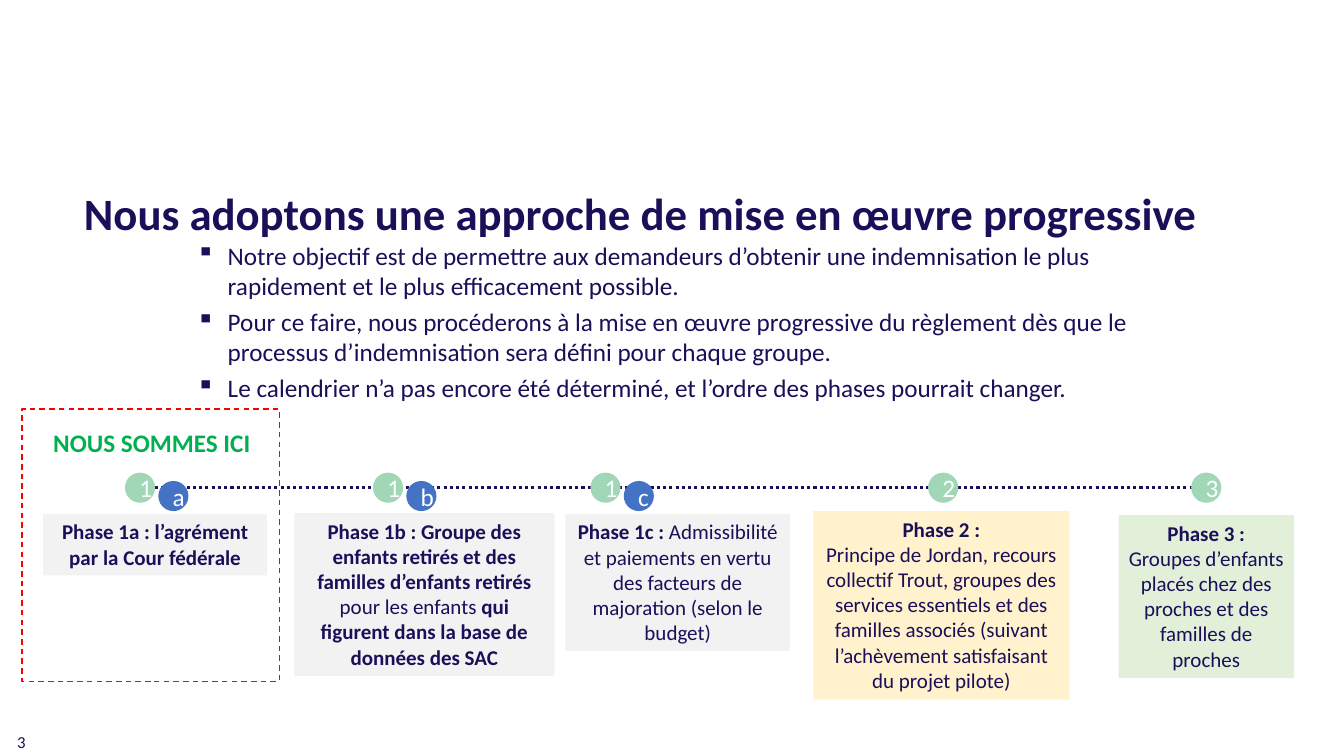
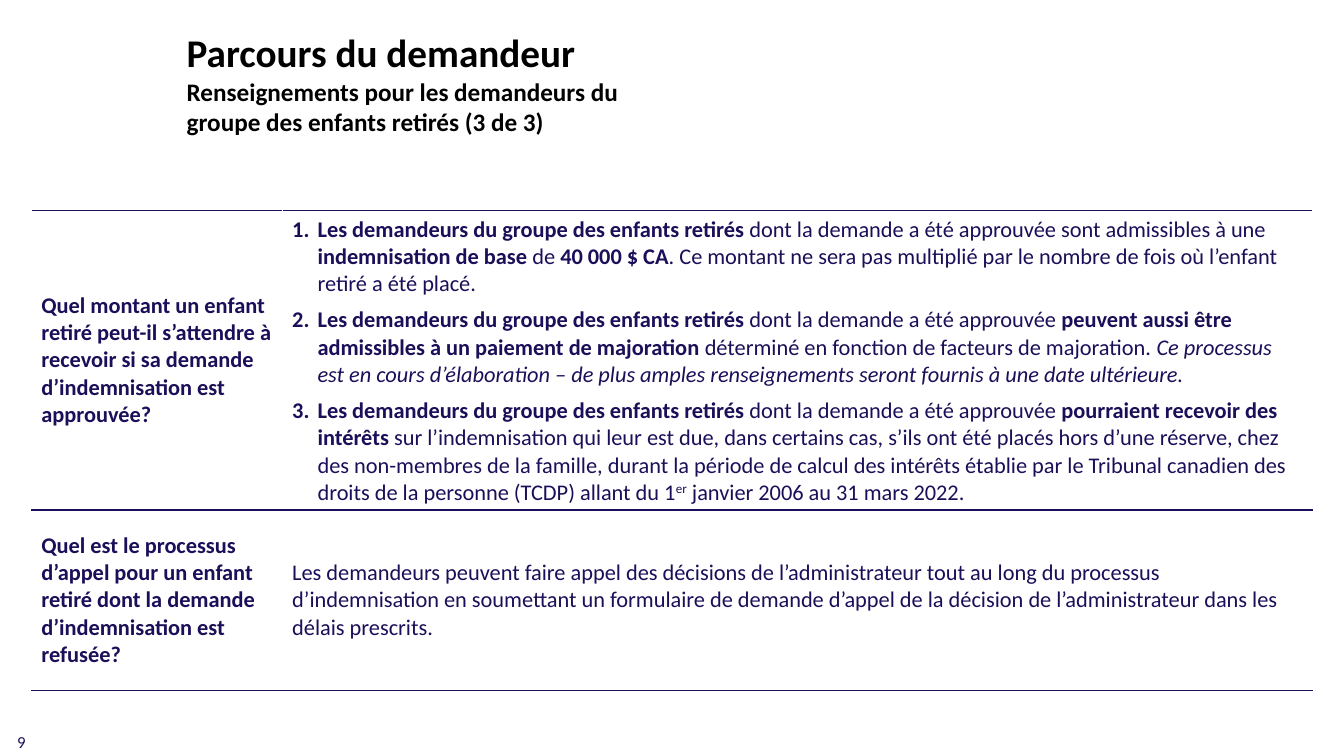
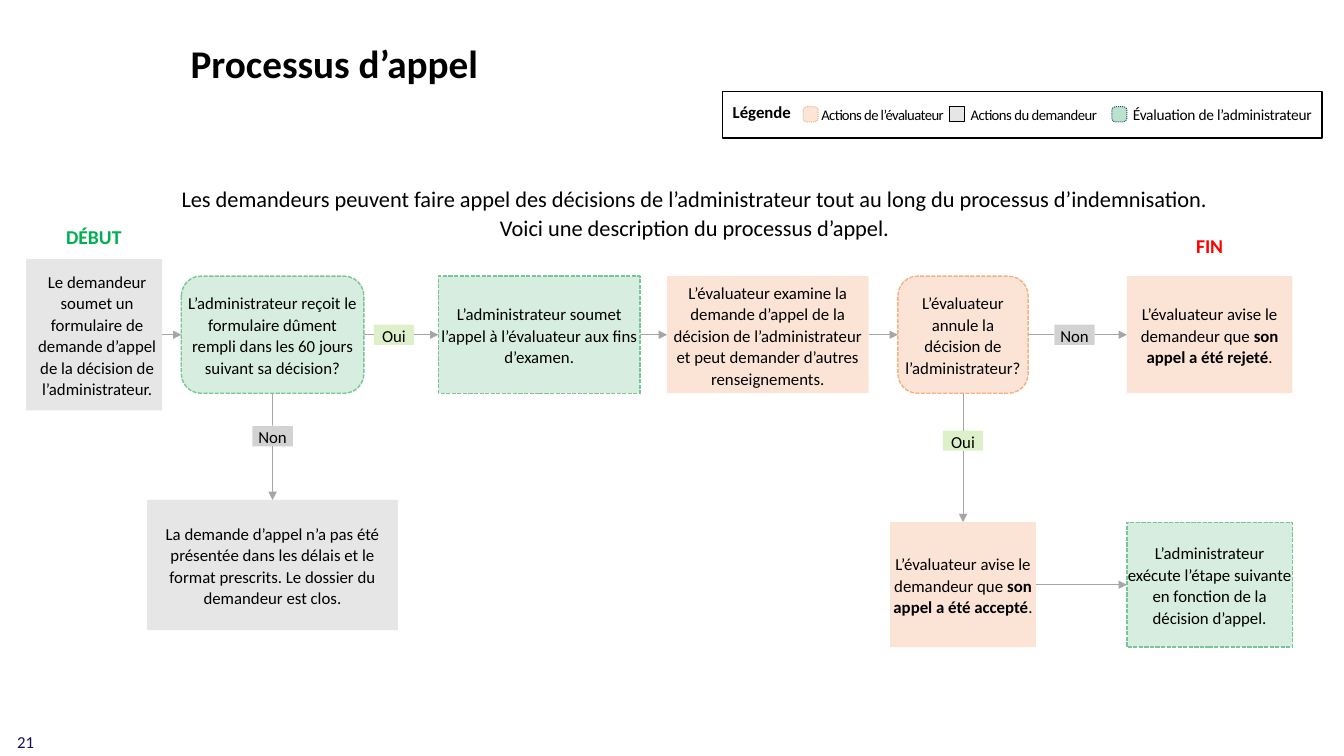
from dataclasses import dataclass
from typing import Iterator, Optional

from lxml.etree import SubElement
from pptx import Presentation
from pptx.dml.color import RGBColor
from pptx.enum.dml import MSO_LINE
from pptx.enum.shapes import MSO_CONNECTOR, MSO_SHAPE
from pptx.enum.text import MSO_ANCHOR, MSO_AUTO_SIZE, PP_ALIGN
from pptx.oxml import parse_xml
from pptx.oxml.ns import nsdecls, qn
from pptx.util import Cm, Pt


@dataclass(frozen=True)
class Theme:
    face: str = "Calibri"
    navy: str = "1B0F59"
    black: str = "000000"
    white: str = "FFFFFF"
    red: str = "FF0000"
    go: str = "00B050"
    mint: str = "A1D7B7"
    blue: str = "4472C4"
    pale: str = "F2F2F2"
    sand: str = "FFF2CC"
    leaf: str = "E2F0D9"
    gray: str = "E7E6E6"
    wire: str = "A6A6A6"
    green: str = "78C697"
    lime: str = "BCE395"
    peach: str = "F8CBAD"
    blush: str = "FBE5D6"
    rust: str = "F4B183"
    steel: str = "1F4E79"
    head: float = 32
    title: float = 28
    body: float = 18
    cell: float = 16
    card: float = 15
    flag: float = 14
    small: float = 12
    key: float = 10.5


T = Theme()


@dataclass(frozen=True)
class Area:
    x: float
    y: float
    w: float
    h: float

    def cm(self) -> tuple:
        return Cm(self.x), Cm(self.y), Cm(self.w), Cm(self.h)


@dataclass(frozen=True)
class Type:
    size: float
    color: str = T.black
    bold: bool = False
    align: PP_ALIGN = PP_ALIGN.CENTER
    lead: float = 1.0
    after: float = 0
    track: float = 0


@dataclass(frozen=True)
class Look:
    fill: Optional[str] = None
    alpha: int = 100
    line: Optional[str] = None
    width: float = 1
    dash: Optional[MSO_LINE] = None
    form: MSO_SHAPE = MSO_SHAPE.RECTANGLE


@dataclass(frozen=True)
class Phase:
    area: Area
    fill: str
    text: str
    dot: float
    digit: str
    letter: str = ""


@dataclass(frozen=True)
class Step:
    name: str
    area: Area
    look: Look
    text: str
    inset: Optional[tuple] = (0, 0)


@dataclass(frozen=True)
class Key:
    x: float
    gap: float
    w: float
    look: Look
    text: str
    type: Type


LEFT = PP_ALIGN.LEFT
DOT = Type(T.body, T.white)
CARD = Type(T.card, T.navy)
FLOW = Type(T.small, lead=1.07, after=6.4)
ROUND = MSO_SHAPE.ROUNDED_RECTANGLE
ADMIN = Look(T.green, 30, T.green, 1, MSO_LINE.SQUARE_DOT)
CHECK = Look(T.green, 30, T.green, 1, MSO_LINE.SQUARE_DOT, ROUND)
JUDGE = Look(T.peach, 50)
RULE = Look(T.peach, 50, T.rust, 1, MSO_LINE.SQUARE_DOT, ROUND)
CLAIM = Look(T.gray)
YES = Look(T.lime, 50)
NO = Look(T.wire, 50)
BULLET = ("a:buChar", "char", "▪")
NUMBER = ("a:buAutoNum", "type", "arabicPeriod")

PHASES = [
    Phase(Area(1.09, 12.95, 5.64, 1.55), T.pale,
          "*Phase 1a : l’agrément par la Cour fédérale*", 3.15, "1", "a"),
    Phase(Area(7.42, 12.93, 6.55, 4.11), T.pale,
          "*Phase 1b : Groupe des enfants retirés et des familles d’enfants retirés "
          "*pour les enfants *qui figurent dans la base de données des SAC*", 9.4, "1", "b"),
    Phase(Area(14.25, 12.95, 5.66, 3.45), T.pale,
          "*Phase 1c : *Admissibilité et paiements en vertu des facteurs de majoration "
          "(selon le budget)", 14.88, "1", "c"),
    Phase(Area(20.5, 12.88, 6.45, 4.75), T.sand,
          "*Phase 2 :*\nPrincipe de Jordan, recours collectif Trout, groupes des services "
          "essentiels et des familles associés (suivant l’achèvement satisfaisant du projet "
          "pilote)", 23.39, "2"),
    Phase(Area(28.19, 12.98, 4.42, 4.11), T.leaf,
          "*Phase 3 :*\nGroupes d’enfants placés chez des proches et des familles de proches",
          30.02, "3"),
]

GOALS = (
    "Notre objectif est de permettre aux demandeurs d’obtenir une indemnisation le plus "
    "rapidement et le plus efficacement possible.\n"
    "Pour ce faire, nous procéderons à la mise en œuvre progressive du règlement dès que le "
    "processus d’indemnisation sera défini pour chaque groupe.\n"
    "Le calendrier n’a pas encore été déterminé, et l’ordre des phases pourrait changer."
)

GROUP = "*Les demandeurs du groupe des enfants retirés *dont la demande a été approuvée "
ROWS = [
    ("Quel montant un enfant retiré peut-il s’attendre à recevoir si sa demande "
     "d’indemnisation est approuvée?",
     GROUP + "sont admissibles à une *indemnisation de base *de *40 000 $ CA*. Ce montant ne "
     "sera pas multiplié par le nombre de fois où l’enfant retiré a été placé.\n"
     + GROUP + "*peuvent aussi être admissibles à un paiement de majoration *déterminé en "
     "fonction de facteurs de majoration. _Ce processus est en cours d’élaboration – de plus "
     "amples renseignements seront fournis à une date ultérieure._\n"
     + GROUP + "*pourraient recevoir des intérêts* sur l’indemnisation qui leur est due, dans "
     "certains cas, s’ils ont été placés hors d’une réserve, chez des non-membres de la "
     "famille, durant la période de calcul des intérêts établie par le Tribunal canadien des "
     "droits de la personne (TCDP) allant du 1^er^ janvier 2006 au 31 mars 2022."),
    ("Quel est le processus d’appel pour un enfant retiré dont la demande d’indemnisation "
     "est refusée?",
     "Les demandeurs peuvent faire appel des décisions de l’administrateur tout au long du "
     "processus d’indemnisation en soumettant un formulaire de demande d’appel de la décision "
     "de l’administrateur dans les délais prescrits."),
]

TOP, HIGH, LOW, DEEP = 6.96, 2.95, 13.16, 3.15
TAG, TALL = 1.02, 0.51
STEPS = [
    Step("start", Area(0.66, 6.53, 3.43, 3.81), CLAIM,
         "Le demandeur soumet un formulaire de demande d’appel de la décision de "
         "l’administrateur.", (0.15, 0)),
    Step("check", Area(4.57, TOP, 4.6, HIGH), CHECK,
         "L’administrateur reçoit le formulaire dûment rempli dans les 60 jours suivant sa "
         "décision?"),
    Step("in time", Area(9.42, 8.18, TAG, TALL), YES, "Oui"),
    Step("late", Area(6.36, 10.74, TAG, TALL), NO, "Non"),
    Step("closed", Area(3.71, 12.6, 6.32, 3.28), CLAIM,
         "La demande d’appel n’a pas été présentée dans les délais et le format prescrits. "
         "Le dossier du demandeur est clos.", None),
    Step("submit", Area(11.05, TOP, 5.08, HIGH), ADMIN,
         "L’administrateur soumet l’appel à l’évaluateur aux fins d’examen."),
    Step("review", Area(16.81, TOP, 5.08, HIGH), JUDGE,
         "L’évaluateur examine la demande d’appel de la décision de l’administrateur et peut "
         "demander d’autres renseignements."),
    Step("rule", Area(22.63, TOP, 3.28, HIGH), RULE,
         "L’évaluateur annule la décision de l’administrateur?"),
    Step("upheld", Area(26.57, 8.18, TAG, TALL), NO, "Non"),
    Step("annulled", Area(23.76, 10.85, TAG, TALL), YES, "Oui"),
    Step("reject", Area(28.4, TOP, 4.17, HIGH), JUDGE,
         "L’évaluateur avise le demandeur que *son appel a été rejeté*."),
    Step("accept", Area(22.43, LOW, 3.68, DEEP), JUDGE,
         "L’évaluateur avise le demandeur que *son appel a été accepté*."),
    Step("next", Area(28.4, LOW, 4.17, DEEP), ADMIN,
         "L’administrateur exécute l’étape suivante en fonction de la décision d’appel."),
]
ACROSS = [("start", "check"), ("check", "in time"), ("in time", "submit"),
          ("submit", "review"), ("review", "rule"), ("rule", "upheld"),
          ("upheld", "reject"), ("accept", "next")]
DOWN = [("check", "late"), ("late", "closed"), ("rule", "annulled"), ("annulled", "accept")]
TAGS = {"in time", "late", "upheld", "annulled"}

KEYS = [
    Key(20.24, 0.21, 3.86, Look(T.blush, 100, T.rust, 0.75, MSO_LINE.ROUND_DOT, ROUND),
        "Actions de l’évaluateur", Type(T.key, align=LEFT, track=-0.4)),
    Key(23.93, 0.28, 3.86, Look(T.gray, 100, T.black, 0.5),
        "Actions du demandeur", Type(T.key, align=LEFT, track=-0.3)),
    Key(28.02, 0.28, 5.46, Look(T.green, 50, T.steel, 0.75, MSO_LINE.ROUND_DOT, ROUND),
        "Évaluation de l’administrateur", Type(11, align=LEFT, track=-0.2)),
]


def rgb(code: str) -> RGBColor:
    return RGBColor.from_string(code)


def spans(text: str) -> Iterator[tuple]:
    for i, part in enumerate(text.split("*")):
        for j, piece in enumerate(part.split("_")):
            for k, bit in enumerate(piece.split("^")):
                if bit:
                    yield bit, i % 2 == 1, j % 2 == 1, k % 2 == 1


def write(frame, text: str, type: Type, mark: Optional[tuple] = None, hang: float = 0) -> None:
    frame.text = text
    for para in frame.paragraphs:
        bits = list(spans(para.text))
        para.clear()
        para.alignment = type.align
        para.line_spacing = type.lead
        para.space_after = Pt(type.after)
        if mark:
            tag, name, value = mark
            props = para._p.get_or_add_pPr()
            props.set("marL", str(Cm(hang)))
            props.set("indent", str(-Cm(hang)))
            SubElement(props, qn(tag)).set(name, value)
        for bit, bold, slant, raised in bits:
            run = para.add_run()
            run.text = bit
            font = run.font
            font.name, font.size = T.face, Pt(type.size)
            font.bold, font.italic = type.bold or bold, slant
            font.color.rgb = rgb(type.color)
            props = run._r.get_or_add_rPr()
            if raised:
                props.set("baseline", "30000")
            if type.track:
                props.set("spc", str(round(type.track * 100)))


def label(slide, area: Area, text: str, type: Type, anchor=MSO_ANCHOR.TOP,
          mark: Optional[tuple] = None, hang: float = 0) -> None:
    frame = slide.shapes.add_textbox(*area.cm()).text_frame
    frame.word_wrap = True
    frame.vertical_anchor = anchor
    write(frame, text, type, mark, hang)


def draw(slide, area: Area, look: Look, text: str = "", type: Type = CARD,
         anchor=MSO_ANCHOR.MIDDLE, inset: Optional[tuple] = None):
    shape = slide.shapes.add_shape(look.form, *area.cm())
    shape.shadow.inherit = False
    if look.fill:
        shape.fill.solid()
        shape.fill.fore_color.rgb = rgb(look.fill)
        if look.alpha < 100:
            tint = shape._element.spPr.find(".//" + qn("a:srgbClr"))
            SubElement(tint, qn("a:alpha")).set("val", str(look.alpha * 1000))
    else:
        shape.fill.background()
    if look.line:
        shape.line.color.rgb = rgb(look.line)
        shape.line.width = Pt(look.width)
        shape.line.dash_style = look.dash
    else:
        shape.line.fill.background()
    if text:
        frame = shape.text_frame
        frame.word_wrap = True
        frame.vertical_anchor = anchor
        if inset:
            frame.margin_left, frame.margin_right = Cm(inset[0]), Cm(inset[1])
            frame.margin_top = frame.margin_bottom = 0
        write(frame, text, type)
    return shape


def wire(slide, color: str, width: float):
    line = slide.shapes.add_connector(MSO_CONNECTOR.STRAIGHT, 0, 0, 0, 0)
    line.line.color.rgb = rgb(color)
    line.line.width = Pt(width)
    return line


def plain(line) -> None:
    SubElement(line._element.spPr, qn("a:effectLst"))


def link(slide, start, end, sites: tuple, arrow: bool) -> None:
    line = wire(slide, T.wire, 0.5)
    line.begin_connect(start, sites[0])
    line.end_connect(end, sites[1])
    if arrow:
        SubElement(line.line._get_or_add_ln(), qn("a:tailEnd")).set("type", "triangle")
    plain(line)


def page(deck, title: str, area: Area, type: Type, number: str, anchor=MSO_ANCHOR.TOP):
    slide = deck.slides.add_slide(deck.slide_layouts[5])
    head = slide.shapes.title
    head.left, head.top, head.width, head.height = area.cm()
    frame = head.text_frame
    frame.word_wrap = True
    frame.auto_size = MSO_AUTO_SIZE.NONE
    frame.vertical_anchor = anchor
    write(frame, title, type)
    label(slide, Area(0.18, 18.29, 7.62, 0.81), number,
          Type(T.small, T.navy, align=LEFT), MSO_ANCHOR.MIDDLE)
    return slide


def phases(deck) -> None:
    slide = page(deck, "Nous adoptons une approche de mise en œuvre progressive",
                 Area(1.22, 4.55, 29.85, 1.63), Type(T.head, T.navy, True), "3")
    line = wire(slide, T.navy, 2.25)
    line.begin_x, line.end_x = Cm(3.91), Cm(30.68)
    line.begin_y = line.end_y = Cm(12.29)
    line.line.dash_style = MSO_LINE.ROUND_DOT
    plain(line)
    label(slide, Area(4.7, 5.92, 26.11, 4.39), GOALS,
          Type(T.body, T.navy, align=LEFT, after=4), mark=BULLET, hang=0.79)
    size = 0.76
    for item in PHASES:
        draw(slide, item.area, Look(item.fill), item.text, CARD, MSO_ANCHOR.TOP)
        draw(slide, Area(item.dot, 11.91, size, size),
             Look(T.mint, form=MSO_SHAPE.OVAL), item.digit, DOT)
        if item.letter:
            draw(slide, Area(item.dot + 0.84, 12.12, size, size),
                 Look(T.blue, form=MSO_SHAPE.OVAL), item.letter, DOT)
    draw(slide, Area(0.56, 10.31, 6.48, 6.86), Look(line=T.red, dash=MSO_LINE.DASH))
    label(slide, Area(1.02, 10.64, 5.61, 1.02), "NOUS SOMMES ICI", Type(T.body, T.go, True))


def edge(cell) -> None:
    cell.fill.background()
    props = cell._tc.get_or_add_tcPr()
    sides = (("L", T.white), ("R", T.white), ("T", T.navy), ("B", T.navy))
    for i, (side, color) in enumerate(sides):
        props.insert(i, parse_xml(
            f'<a:ln{side} {nsdecls("a")} w="{Pt(1)}"><a:solidFill>'
            f'<a:srgbClr val="{color}"/></a:solidFill></a:ln{side}>'))


def answers(deck) -> None:
    slide = page(deck, "Parcours du demandeur\nRenseignements pour les demandeurs du groupe "
                 "des enfants retirés (3 de 3)", Area(4.45, 0.58, 11.79, 3),
                 Type(T.title, bold=True, align=LEFT), "9", MSO_ANCHOR.MIDDLE)
    for run in slide.shapes.title.text_frame.paragraphs[1].runs:
        run.font.size = Pt(T.body)
    grid = slide.shapes.add_table(2, 2, *Area(0.79, 5.31, 32.28, 12.09).cm()).table
    grid.first_row = grid.horz_banding = False
    for col, width in zip(grid.columns, (6.32, 25.96)):
        col.width = Cm(width)
    for row, height, texts in zip(grid.rows, (7.54, 4.55), ROWS):
        row.height = Cm(height)
        for i, (cell, text) in enumerate(zip(row.cells, texts)):
            edge(cell)
            cell.vertical_anchor = MSO_ANCHOR.MIDDLE
            many = "\n" in text
            write(cell.text_frame, text,
                  Type(T.cell, T.navy, i == 0, LEFT, after=6 if many else 0),
                  NUMBER if many else None, 0.64)


def appeal(deck) -> None:
    slide = page(deck, "Processus d’appel", Area(4.55, 0.86, 11.79, 1.45),
                 Type(T.title, bold=True, align=LEFT), "21")
    label(slide, Area(1.58, 4.5, 31.85, 1.68),
          "Les demandeurs peuvent faire appel des décisions de l’administrateur tout au long "
          "du processus d’indemnisation.\nVoici une description du processus d’appel.",
          Type(T.cell, lead=1.07))
    shapes = {}
    for step in STEPS:
        type = FLOW if step.inset else Type(T.small, lead=1.07)
        shapes[step.name] = draw(slide, step.area, step.look, step.text, type,
                                 inset=step.inset)
    for pairs, sites in ((ACROSS, (3, 1)), (DOWN, (2, 0))):
        for start, end in pairs:
            link(slide, shapes[start], shapes[end], sites, end not in TAGS)
    draw(slide, Area(18.21, 2.31, 15.11, 1.17), Look(T.white, line=T.black))
    label(slide, Area(18.11, 2.44, 2.18, 0.76), "Légende", Type(T.small, bold=True),
          MSO_ANCHOR.MIDDLE)
    for key in KEYS:
        chip = draw(slide, Area(key.x, 2.69, 0.38, 0.38), key.look)
        if key.look.form == ROUND:
            chip.adjustments[0] = 0.25
        label(slide, Area(key.x + key.gap, 2.54, key.w, 0.71), key.text, key.type,
              MSO_ANCHOR.MIDDLE)
    label(slide, Area(0.84, 5.54, 3.05, 0.86), "DÉBUT", Type(T.flag, T.go, True))
    label(slide, Area(28.96, 5.77, 3.05, 0.86), "FIN", Type(T.flag, T.red, True))


def main() -> None:
    deck = Presentation()
    deck.slide_width, deck.slide_height = Cm(33.87), Cm(19.05)
    for make in (phases, answers, appeal):
        make(deck)
    deck.save("out.pptx")


if __name__ == "__main__":
    main()
